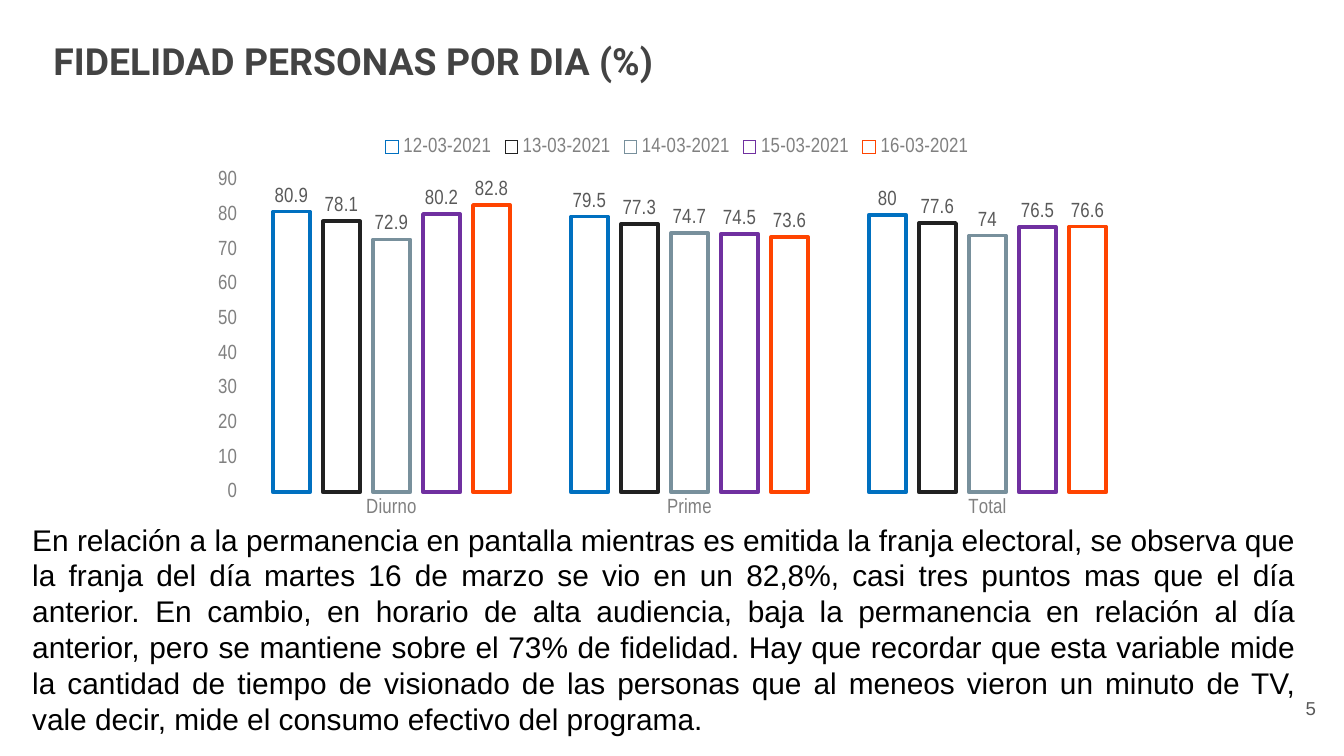
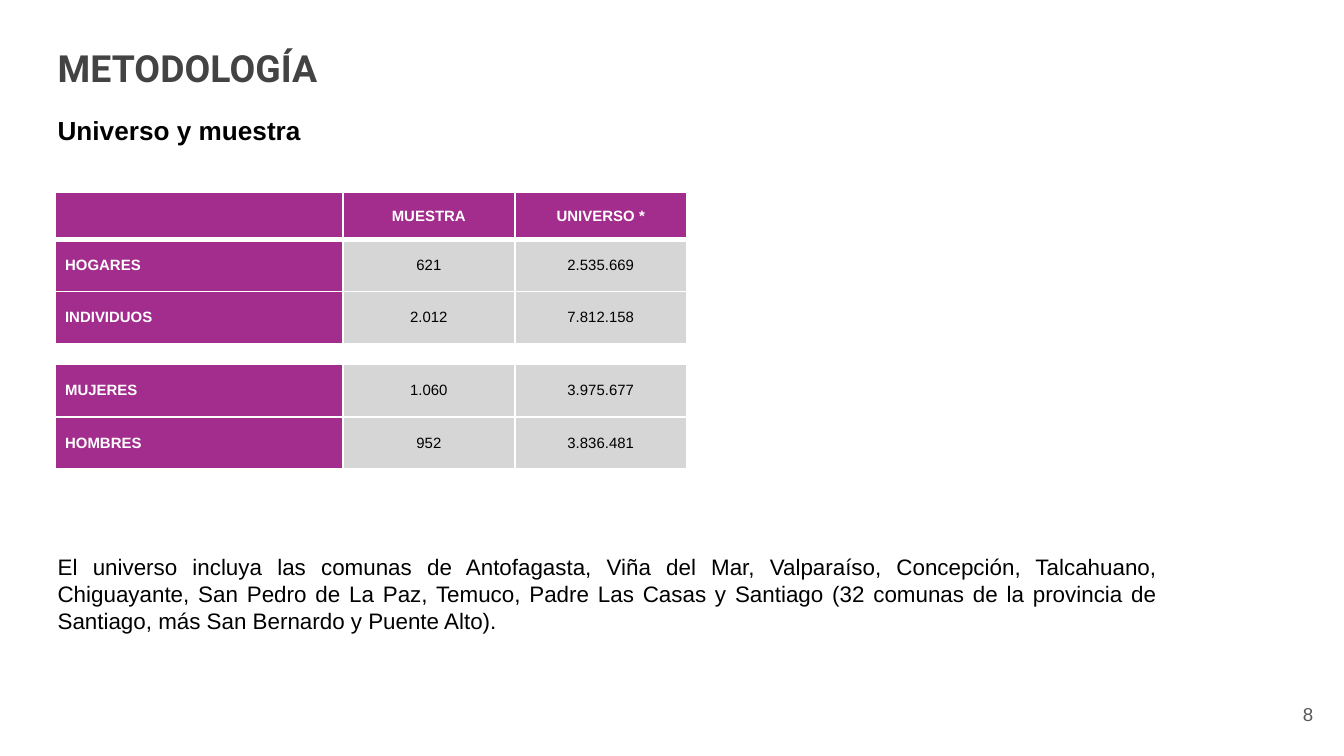
from dataclasses import dataclass
from typing import Any

from lxml.etree import SubElement
from pptx import Presentation
from pptx.chart.data import CategoryChartData
from pptx.dml.color import RGBColor
from pptx.enum.chart import (
    XL_CHART_TYPE as ChartType,
    XL_LABEL_POSITION as LabelPosition,
    XL_LEGEND_POSITION as LegendPosition,
    XL_TICK_MARK as TickMark,
)
from pptx.enum.text import MSO_ANCHOR as Anchor, MSO_AUTO_SIZE as AutoSize, PP_ALIGN as Align
from pptx.oxml.ns import qn
from pptx.util import Cm, Pt

WHITE = RGBColor(0xFF, 0xFF, 0xFF)
BLACK = RGBColor(0x00, 0x00, 0x00)
TITLE_GRAY = RGBColor(0x43, 0x43, 0x43)
LABEL_GRAY = RGBColor(0x59, 0x59, 0x59)
AXIS_GRAY = RGBColor(0x80, 0x80, 0x80)
CELL_GRAY = RGBColor(0xD6, 0xD6, 0xD6)
MAGENTA = RGBColor(0xA3, 0x2D, 0x8D)
BLUE = RGBColor(0x00, 0x70, 0xC0)
CHARCOAL = RGBColor(0x21, 0x21, 0x21)
SLATE = RGBColor(0x78, 0x90, 0x9C)
PURPLE = RGBColor(0x70, 0x30, 0xA0)
ORANGE = RGBColor(0xFF, 0x44, 0x00)

BODY_FONT, TITLE_FONT, CHART_FONT = "Arial", "Roboto", "Arial Narrow"
TITLE_ONLY = 5
WIDE_INSET = Cm(0.25)
CELL_INSET = Cm(0.18)


@dataclass(frozen=True)
class Box:
    """Left, top, width and height in centimetres."""
    left: float
    top: float
    width: float
    height: float

    def lengths(self) -> tuple[Cm, Cm, Cm, Cm]:
        return Cm(self.left), Cm(self.top), Cm(self.width), Cm(self.height)


@dataclass(frozen=True)
class TextStyle:
    size: float
    color: RGBColor = BLACK
    font: str = BODY_FONT
    bold: bool = False
    align: Align = Align.LEFT


@dataclass(frozen=True)
class DaySeries:
    date: str
    color: RGBColor
    values: tuple[float, ...]


TITLE = TextStyle(20, TITLE_GRAY, TITLE_FONT, bold=True)
PAGE_NUMBER = TextStyle(10, LABEL_GRAY, align=Align.RIGHT)
SUBTITLE = TextStyle(14, bold=True)
COMMENT = TextStyle(16, align=Align.JUSTIFY)
UNIVERSE_NOTE = TextStyle(12, align=Align.JUSTIFY)
AXIS_TEXT = TextStyle(11, AXIS_GRAY, CHART_FONT)
VALUE_TEXT = TextStyle(11, LABEL_GRAY, CHART_FONT)
HEADER_CELL = TextStyle(8, WHITE, bold=True, align=Align.CENTER)
GROUP_CELL = TextStyle(8, WHITE, bold=True)
FIGURE_CELL = TextStyle(8, align=Align.CENTER)

TIME_BANDS = ("Diurno", "Prime", "Total")
DAYS = (
    DaySeries("12-03-2021", BLUE, (80.9, 79.5, 80)),
    DaySeries("13-03-2021", CHARCOAL, (78.1, 77.3, 77.6)),
    DaySeries("14-03-2021", SLATE, (72.9, 74.7, 74)),
    DaySeries("15-03-2021", PURPLE, (80.2, 74.5, 76.5)),
    DaySeries("16-03-2021", ORANGE, (82.8, 73.6, 76.6)),
)
LOYALTY_COMMENT = (
    "En relación a la permanencia en pantalla mientras es emitida la franja electoral, "
    "se observa que la franja del día martes 16 de marzo se vio en un 82,8%, casi tres "
    "puntos mas que el día anterior. En cambio, en horario de alta audiencia, baja la "
    "permanencia en relación al día anterior, pero se mantiene sobre el 73% de fidelidad. "
    "Hay que recordar que esta variable mide la cantidad de tiempo de visionado de las "
    "personas que al meneos vieron un minuto de TV, vale decir, mide el consumo efectivo "
    "del programa."
)

SAMPLE_ROWS = (
    ("", "MUESTRA", "UNIVERSO *"),
    ("HOGARES", "621", "2.535.669"),
    ("INDIVIDUOS", "2.012", "7.812.158"),
    None,
    ("MUJERES", "1.060", "3.975.677"),
    ("HOMBRES", "952", "3.836.481"),
    None,
)
COLUMN_WIDTHS = (5.43, 3.25, 3.25)
HEADER_HEIGHT, ROW_HEIGHT, SPACER_HEIGHT = 0.88, 0.99, 0.39
COMMUNES = (
    "El universo incluya las comunas de Antofagasta, Viña del Mar, Valparaíso, Concepción, "
    "Talcahuano, Chiguayante, San Pedro de La Paz, Temuco, Padre Las Casas y Santiago "
    "(32 comunas de la provincia de Santiago, más San Bernardo y Puente Alto)."
)


def assign(target: Any, **values: Any) -> None:
    for attribute, value in values.items():
        setattr(target, attribute, value)


def style_font(font: Any, style: TextStyle) -> None:
    assign(font, name=style.font, size=Pt(style.size), bold=style.bold)
    font.color.rgb = style.color


def write(frame: Any, text: str, style: TextStyle) -> None:
    paragraph = frame.paragraphs[0]
    paragraph.alignment = style.align
    run = paragraph.add_run()
    run.text = text
    style_font(run.font, style)


def widen_insets(frame: Any) -> None:
    sides = ("left", "top", "right", "bottom")
    assign(frame, **{f"margin_{side}": WIDE_INSET for side in sides})


def add_text(slide: Any, box: Box, text: str, style: TextStyle, wrap: bool = True) -> Any:
    frame = slide.shapes.add_textbox(*box.lengths()).text_frame
    frame.word_wrap = wrap
    write(frame, text, style)
    return frame


def add_titled_slide(deck: Any, title: str, title_box: Box, page: str, page_box: Box) -> Any:
    slide = deck.slides.add_slide(deck.slide_layouts[TITLE_ONLY])
    heading = slide.shapes.title
    left, top, width, height = title_box.lengths()
    assign(heading, left=left, top=top, width=width, height=height)
    assign(heading.text_frame, vertical_anchor=Anchor.TOP, auto_size=AutoSize.NONE, word_wrap=True)
    widen_insets(heading.text_frame)
    write(heading.text_frame, title, TITLE)

    page_frame = add_text(slide, page_box, page, PAGE_NUMBER)
    page_frame.vertical_anchor = Anchor.MIDDLE
    widen_insets(page_frame)
    return slide


def add_loyalty_chart(slide: Any, box: Box) -> None:
    data = CategoryChartData()
    data.categories = TIME_BANDS
    for day in DAYS:
        data.add_series(day.date, day.values)
    chart = slide.shapes.add_chart(ChartType.COLUMN_CLUSTERED, *box.lengths(), data).chart
    assign(chart, has_title=False, has_legend=True)
    style_font(chart.font, AXIS_TEXT)
    assign(chart.legend, position=LegendPosition.TOP, include_in_layout=False)
    style_font(chart.legend.font, AXIS_TEXT)

    for axis in (chart.category_axis, chart.value_axis):
        assign(axis, has_major_gridlines=False,
               major_tick_mark=TickMark.NONE, minor_tick_mark=TickMark.NONE)
        axis.format.line.fill.background()
        style_font(axis.tick_labels.font, AXIS_TEXT)
    assign(chart.value_axis, minimum_scale=0, maximum_scale=90, major_unit=10)

    plot = chart.plots[0]
    assign(plot, gap_width=164, overlap=-35, vary_by_categories=False)
    for day, columns in zip(DAYS, plot.series):
        columns.format.fill.background()
        columns.format.line.color.rgb = day.color
        columns.format.line.width = Pt(2)
        assign(columns.data_labels, show_value=True, position=LabelPosition.OUTSIDE_END)
        style_font(columns.data_labels.font, VALUE_TEXT)


def border_cell(cell: Any, top: float, bottom: float) -> None:
    properties = cell._tc.get_or_add_tcPr()
    for edge, points in (("L", 1), ("R", 1), ("T", top), ("B", bottom)):
        line = SubElement(properties, qn(f"a:ln{edge}"), w=str(Pt(points)))
        fill = SubElement(line, qn("a:solidFill"))
        SubElement(fill, qn("a:srgbClr"), val=str(WHITE))


def fill_cell(cell: Any, text: str, style: TextStyle, color: RGBColor) -> None:
    cell.fill.solid()
    cell.fill.fore_color.rgb = color
    if text:
        write(cell.text_frame, text, style)


def clear_spacer(cell: Any) -> None:
    """Keep an empty cell from growing past its row height."""
    cell.fill.background()
    SubElement(cell.text_frame.paragraphs[0]._p, qn("a:endParaRPr"), sz="400")


def add_sample_table(slide: Any, left: float, top: float) -> None:
    heights = [SPACER_HEIGHT if row is None else ROW_HEIGHT for row in SAMPLE_ROWS]
    heights[0] = HEADER_HEIGHT
    box = Box(left, top, sum(COLUMN_WIDTHS), sum(heights))
    table = slide.shapes.add_table(len(heights), len(COLUMN_WIDTHS), *box.lengths()).table
    assign(table, first_row=False, horz_banding=False)
    for column, width in zip(table.columns, COLUMN_WIDTHS):
        column.width = Cm(width)
    for row, height in zip(table.rows, heights):
        row.height = Cm(height)

    for r, texts in enumerate(SAMPLE_ROWS):
        for c in range(len(COLUMN_WIDTHS)):
            cell = table.cell(r, c)
            assign(cell, margin_left=CELL_INSET, margin_right=CELL_INSET,
                   margin_top=0, margin_bottom=0, vertical_anchor=Anchor.MIDDLE)
            border_cell(cell, top=3 if r == 1 else 1, bottom=3 if r == 0 else 1)
            if texts is None:
                clear_spacer(cell)
            elif r == 0:
                fill_cell(cell, texts[c], HEADER_CELL, MAGENTA)
            elif c == 0:
                fill_cell(cell, texts[c], GROUP_CELL, MAGENTA)
            else:
                fill_cell(cell, texts[c], FIGURE_CELL, CELL_GRAY)


def build_loyalty_slide(deck: Any) -> None:
    slide = add_titled_slide(deck, "FIDELIDAD PERSONAS POR DIA (%)", Box(0.76, 0.48, 21.3, 1.57),
                             "5", Box(23.6, 12.83, 1.52, 1.09))
    add_text(slide, Box(0.36, 9.73, 24.38, 4.37), LOYALTY_COMMENT, COMMENT)
    add_loyalty_chart(slide, Box(3.76, 2.31, 18.08, 7.62))


def build_methodology_slide(deck: Any) -> None:
    slide = add_titled_slide(deck, "METODOLOGÍA", Box(0.84, 0.61, 22.38, 1.6),
                             "8", Box(23.55, 12.95, 1.52, 1.09))
    add_text(slide, Box(0.84, 2.03, 5.13, 0.86), "Universo y muestra", SUBTITLE, wrap=False)
    add_sample_table(slide, left=1.05, top=3.64)
    add_text(slide, Box(0.84, 10.34, 21.3, 1.8), COMMUNES, UNIVERSE_NOTE)


def main() -> None:
    deck = Presentation()
    assign(deck, slide_width=Cm(25.4), slide_height=Cm(14.29))
    build_loyalty_slide(deck)
    build_methodology_slide(deck)
    deck.save("out.pptx")


if __name__ == "__main__":
    main()
